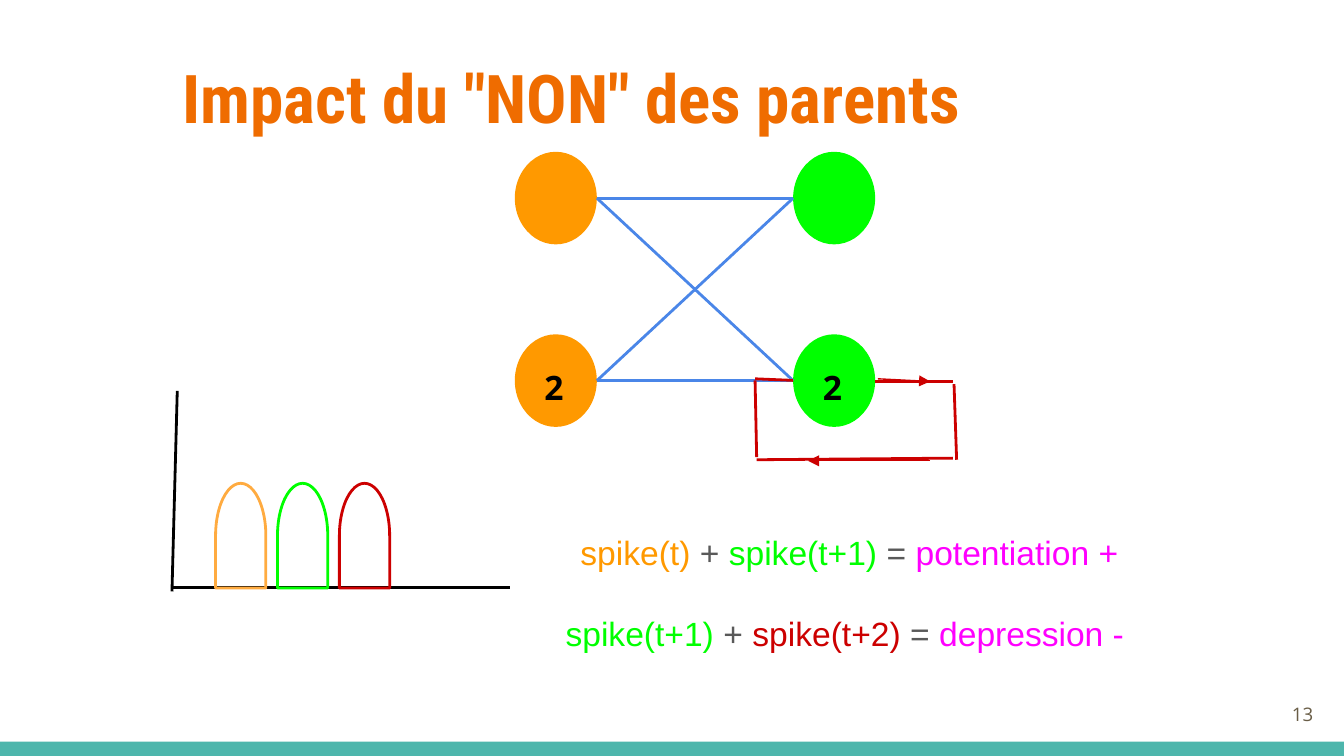
from lxml import etree
from pptx import Presentation
from pptx import util as u
from pptx.dml.color import RGBColor
from pptx.enum import shapes, text
from pptx.oxml.ns import qn

COLORS = {
    "teal": "4DB6AC", "brown": "695D46", "title": "EF6C00", "orange": "FF9900",
    "amber": "FFAB40", "green": "00FF00", "red": "CC0000", "blue": "4A86E8",
    "black": "000000", "grey": "595959", "magenta": "FF00FF",
}
FORMATS = {
    "title": {"name": "Roboto Condensed", "size": u.Pt(36), "bold": True},
    "number": {"name": "Open Sans", "size": u.Pt(10), "bold": False},
    "label": {"name": "Open Sans", "size": u.Pt(18), "bold": True},
    "formula": {"name": "Arial", "size": u.Pt(18), "bold": False},
}
INSET = u.Cm(0.25)
SHAPE = shapes.MSO_SHAPE


def color(name):
    return RGBColor.from_string(COLORS[name])


class Builder:
    def __init__(self, prs):
        self.s = prs.slides.add_slide(prs.slide_layouts[5])

    def fill_text(self, sp, runs, style, align=text.PP_ALIGN.LEFT,
                  anchor=text.MSO_ANCHOR.TOP, wrap=True):
        """Fill a text frame with one paragraph of (text, colour) runs."""
        tf = sp.text_frame
        frame = {
            "word_wrap": wrap,
            "auto_size": text.MSO_AUTO_SIZE.NONE,
            "vertical_anchor": anchor,
            "margin_left": INSET, "margin_right": INSET,
            "margin_top": INSET, "margin_bottom": INSET,
        }
        for key, value in frame.items():
            setattr(tf, key, value)
        p = tf.paragraphs[0]
        p.alignment = align
        for words, name in runs:
            r = p.add_run()
            r.text = words
            for key, value in FORMATS[style].items():
                setattr(r.font, key, value)
            r.font.color.rgb = color(name)

    def title(self, box, words):
        sp = self.s.shapes.title
        sp.left, sp.top, sp.width, sp.height = map(u.Cm, box)
        self.fill_text(sp, [(words, "title")], "title", align=text.PP_ALIGN.CENTER)

    def textbox(self, box, runs, style, **layout):
        sp = self.s.shapes.add_textbox(*map(u.Cm, box))
        self.fill_text(sp, runs, style, **layout)

    def shape(self, kind, box, fill=None, line=None, rotation=0):
        sp = self.s.shapes.add_shape(kind, *map(u.Cm, box))
        sp.shadow.inherit = False
        sp.rotation = rotation
        if fill:
            sp.fill.solid()
            sp.fill.fore_color.rgb = color(fill)
        else:
            sp.fill.background()
        if line:
            sp.line.color.rgb = color(line)
            sp.line.width = u.Pt(1.5)
        else:
            sp.line.fill.background()

    def line(self, start, end, name, width=1.5, arrow=False):
        c = self.s.shapes.add_connector(
            shapes.MSO_CONNECTOR.STRAIGHT, *map(u.Cm, start + end))
        c.line.color.rgb = color(name)
        c.line.width = u.Pt(width)
        spPr = c._element.spPr
        if arrow:
            etree.SubElement(spPr.find(qn("a:ln")), qn("a:tailEnd"), type="triangle")
        etree.SubElement(spPr, qn("a:effectLst"))


def main():
    prs = Presentation()
    prs.slide_width, prs.slide_height = u.Cm(25.4), u.Cm(14.29)
    b = Builder(prs)

    b.shape(SHAPE.RECTANGLE, (0, 14.02, 25.4, 0.27), fill="teal")
    b.textbox((23.55, 12.95, 1.52, 1.09), [("13", "brown")], "number",
              align=text.PP_ALIGN.RIGHT, anchor=text.MSO_ANCHOR.MIDDLE)
    b.title((0, 0.81, 21.89, 2.06), 'Impact du "NON" des parents ')

    # Two layers of neurons, fully connected
    node_w, node_h = 1.55, 1.75
    layers = {"orange": 9.73, "green": 14.99}
    rows = (2.87, 6.32)
    for fill, x in layers.items():
        for y in rows:
            b.shape(SHAPE.OVAL, (x, y, node_w, node_h), fill=fill)
    for y1 in rows:
        for y2 in rows:
            b.line((layers["orange"] + node_w, y1 + node_h / 2),
                   (layers["green"], y2 + node_h / 2), "blue")

    # Spike chart
    b.line((3.35, 7.39), (3.25, 11.18), "black")
    b.line((3.25, 11.1), (9.63, 11.1), "black")
    for i, name in enumerate(("amber", "green", "red")):
        b.shape(SHAPE.FLOWCHART_DELAY, (3.56 + 1.17 * i, 9.65, 1.98, 0.95),
                line=name, rotation=270)

    b.textbox((10.72, 9.8, 12.09, 1.25),
              [("spike(t) ", "orange"), ("+ ", "grey"), ("spike(t+1)", "green"),
               (" = ", "grey"), ("potentiation +", "magenta")], "formula")
    b.textbox((10.44, 11.33, 12.09, 1.27),
              [("spike(t+1)", "green"), (" + ", "grey"), ("spike(t+2)", "red"),
               (" = ", "grey"), ("depression -", "magenta")], "formula")

    # Feedback loop around the lower green neuron
    loop = [
        ((16.54, 7.21), (18.01, 7.21)),
        ((18.03, 7.26), (18.08, 8.69)),
        ((14.3, 8.69), (18.01, 8.66)),
        ((14.27, 7.19), (14.3, 8.64)),
        ((14.27, 7.16), (14.99, 7.19)),
    ]
    for start, end in loop:
        b.line(start, end, "red")
    b.line((16.59, 7.16), (17.58, 7.21), "red", width=0.75, arrow=True)
    b.line((17.58, 8.71), (15.27, 8.71), "red", width=0.75, arrow=True)

    for x in layers.values():
        b.textbox((x + 0.31, 6.68, 0.91, 1.09), [("2", "black")], "label", wrap=False)

    prs.save("out.pptx")


if __name__ == "__main__":
    main()
